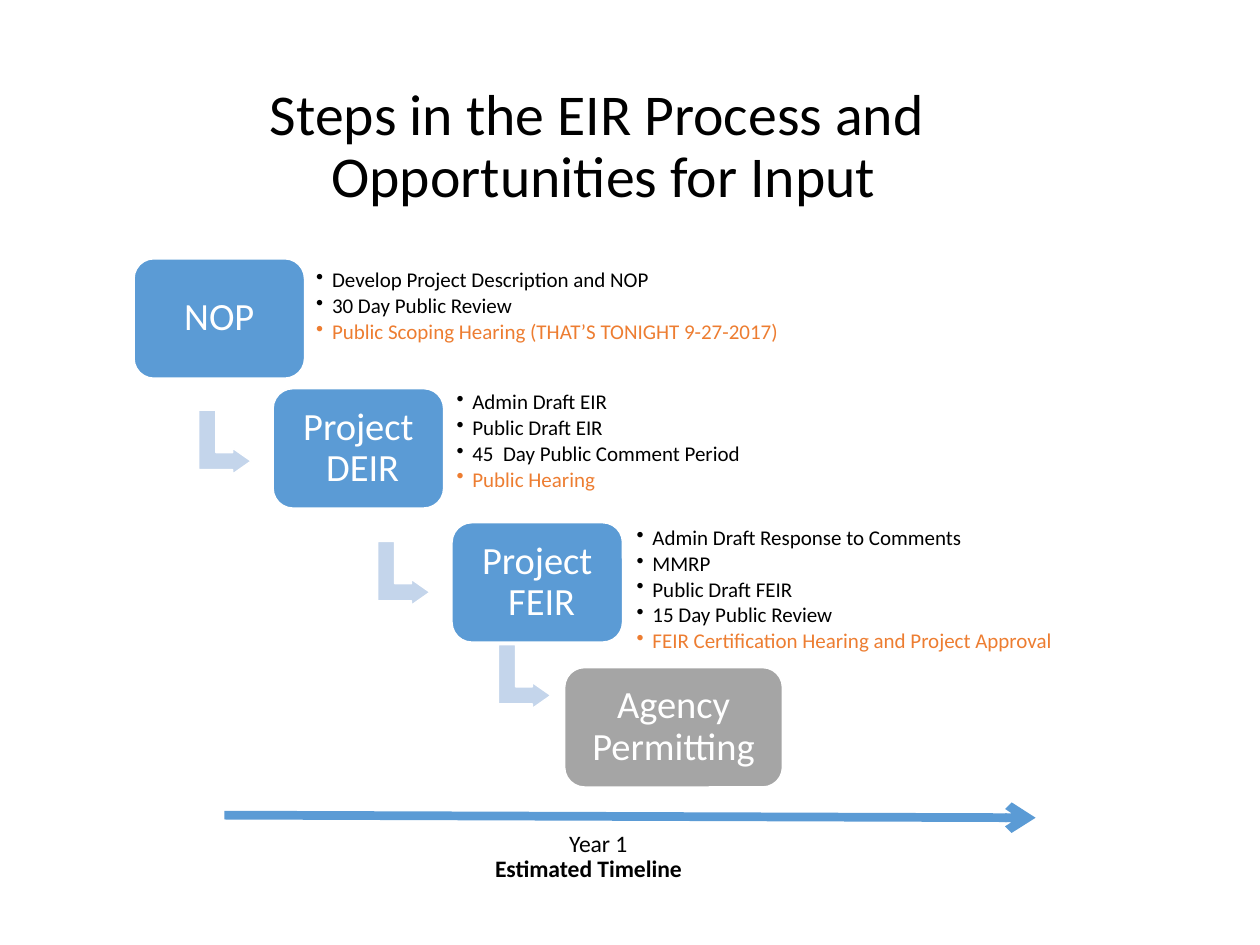
from dataclasses import dataclass

from lxml.etree import SubElement as Sub
from pptx import Presentation
from pptx.dml.color import RGBColor as RGB
from pptx.enum.shapes import MSO_CONNECTOR as Link, MSO_SHAPE as Form
from pptx.enum.text import MSO_ANCHOR as Anchor, PP_ALIGN as Align
from pptx.oxml.ns import qn
from pptx.util import Pt


@dataclass(frozen=True)
class Theme:
    face: str = "Calibri"
    ink: str = "000000"
    pale: str = "FFFFFF"
    blue: str = "5B9BD5"
    gray: str = "A5A5A5"
    bend: str = "C4D5EB"
    hot: str = "ED7D31"
    head: float = 33
    step: float = 22
    item: float = 12
    note: float = 13.5


T = Theme()

# Label, fill, box (left, top, width), list (left, top, width), items.
# The last item of each list is the chance for public input.
STEPS = [
    ("NOP", T.blue, (76.5, 147.8, 97.6), (177.1, 147.6, 325.4),
     ["Develop Project Description and NOP", "30 Day Public Review",
      "Public Scoping Hearing (THAT’S TONIGHT 9-27-2017)"]),
    ("Project\n DEIR", T.blue, (156, 222, 97.6), (257.3, 224.6, 206),
     ["Admin Draft EIR", "Public Draft EIR",
      "45  Day Public Comment Period", "Public Hearing"]),
    ("Project\n FEIR", T.blue, (258.2, 298.6, 97.6), (360.2, 309.6, 287.3),
     ["Admin Draft Response to Comments", "MMRP", "Public Draft FEIR",
      "15 Day Public Review",
      "FEIR Certification Hearing and Project Approval"]),
    ("Agency Permitting", T.gray, (322.6, 381.4, 124.6), None, []),
]
BENDS = [(110.2, 237.6), (212.4, 312.5), (281.5, 371.5)]


def put(item, **vals):
    """Set attributes from a dict of format values."""
    for key, val in vals.items():
        setattr(item, key, val)


def style(para, size, color, **vals):
    put(para.font, name=T.face, size=Pt(size), **vals)
    para.font.color.rgb = RGB.from_string(color)


def frame(shape, pad=None, **vals):
    body = shape.text_frame
    put(body, word_wrap=True, **vals)
    if pad is not None:
        sides = ("left", "top", "right", "bottom")
        put(body, **{f"margin_{side}": Pt(pad) for side in sides})
    return body


def solid(slide, form, spot, fill):
    shape = slide.shapes.add_shape(form, *map(Pt, spot))
    shape.shadow.inherit = False
    shape.fill.solid()
    shape.fill.fore_color.rgb = RGB.from_string(fill)
    shape.line.color.rgb = RGB.from_string(T.pale)
    shape.line.width = Pt(1)
    return shape


def bend(slide, left, top):
    shape = solid(slide, Form.BENT_UP_ARROW, (left, top, 36.7, 30.2), T.bend)
    shape.rotation = 90
    for i, val in enumerate((0.328, 0.25, 0.358)):
        shape.adjustments[i] = val


def box(slide, label, fill, spot):
    shape = solid(slide, Form.ROUNDED_RECTANGLE, (*spot, 68.4), fill)
    body = frame(shape, 9.8, vertical_anchor=Anchor.MIDDLE)
    para = body.paragraphs[0]
    put(para, text=label, alignment=Align.CENTER, line_spacing=0.9)
    style(para, T.step, T.pale)


def bullets(slide, spot, items):
    shape = slide.shapes.add_textbox(*map(Pt, (*spot, 55.4)))
    body = frame(shape, 3.6, vertical_anchor=Anchor.MIDDLE)
    for i, text in enumerate(items):
        para = body.add_paragraph() if i else body.paragraphs[0]
        put(para, text=text, line_spacing=0.9, space_after=Pt(1.8))
        props = para._p.get_or_add_pPr()
        props.set("marL", str(Pt(9)))
        props.set("indent", str(Pt(-9)))
        Sub(props, qn("a:buChar")).set("char", "•")
        style(para, T.item, T.hot if text == items[-1] else T.ink)


def note(slide, text, spot, size, bold=False, **vals):
    shape = slide.shapes.add_textbox(*map(Pt, spot))
    para = frame(shape, **vals).paragraphs[0]
    para.text = text
    style(para, size, T.ink, bold=bold)
    return para


def arrow(slide, start, end):
    line = slide.shapes.add_connector(Link.STRAIGHT, *map(Pt, start + end))
    line.line.color.rgb = RGB.from_string(T.blue)
    line.line.width = Pt(5)
    Sub(line.line._get_or_add_ln(), qn("a:tailEnd")).set("type", "arrow")
    Sub(line._element.spPr, qn("a:effectLst"))


def main():
    deck = Presentation()
    put(deck, slide_width=Pt(720), slide_height=Pt(540))
    slide = deck.slides.add_slide(deck.slide_layouts[6])

    # Title
    title = note(slide, "Steps in the EIR Process and \nOpportunities for Input",
                 (5.8, 20.2, 678.2, 128.2), T.head,
                 vertical_anchor=Anchor.MIDDLE)
    put(title, alignment=Align.CENTER, line_spacing=0.9)

    # Staircase of steps
    for spot in BENDS:
        bend(slide, *spot)
    for label, fill, spot, side, items in STEPS:
        box(slide, label, fill, spot)
        if items:
            bullets(slide, side, items)

    # Timeline
    arrow(slide, (128.2, 465.8), (591.8, 467.3))
    note(slide, "Year 1", (318.2, 470.2, 193.7, 23.8), T.note)
    note(slide, "Estimated Timeline", (275.8, 484.6, 180, 23.8), T.note, True)

    deck.save("out.pptx")


if __name__ == "__main__":
    main()
